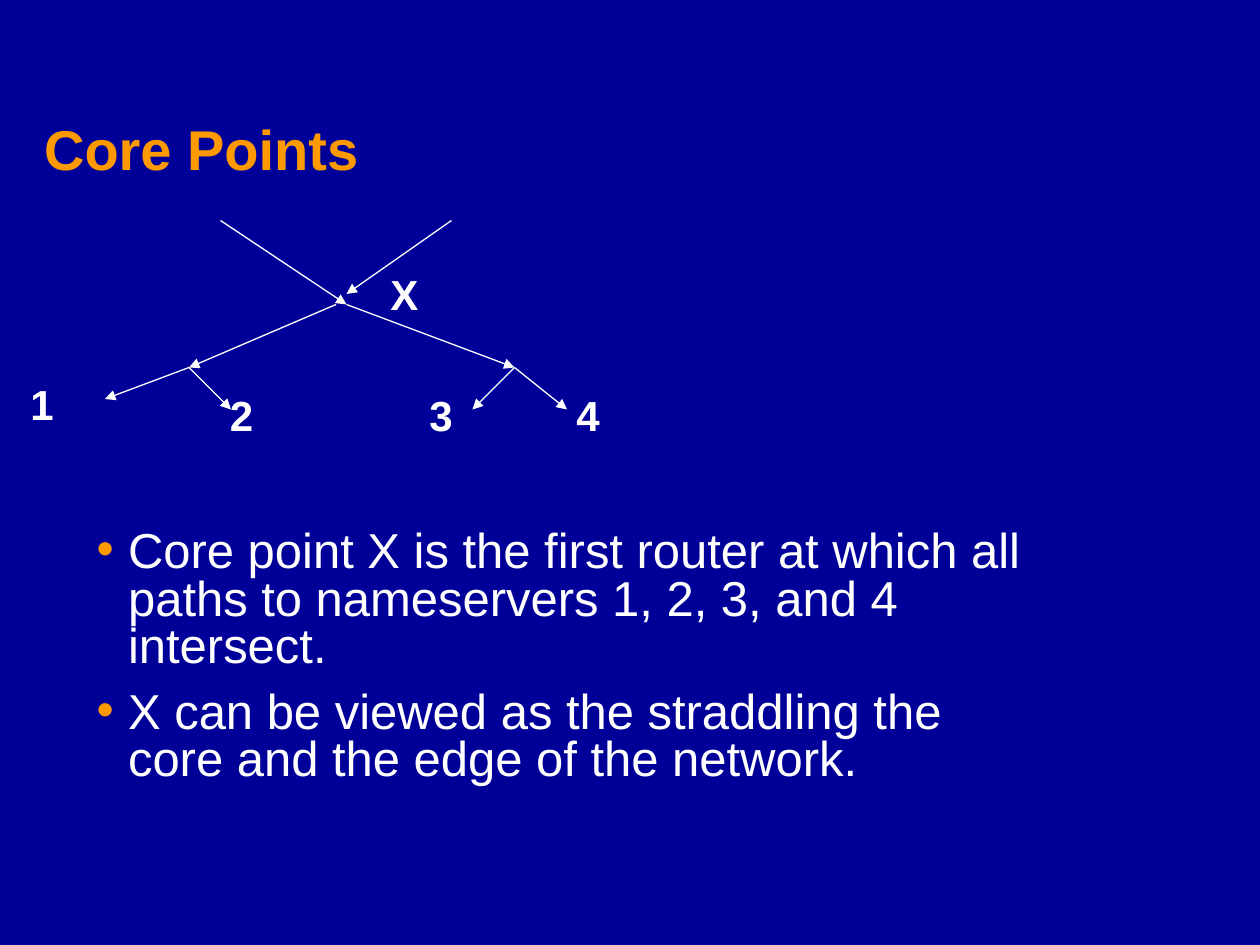
from pptx import Presentation
from pptx.dml.color import RGBColor
from pptx.enum.shapes import MSO_CONNECTOR as Link
from pptx.enum.text import MSO_ANCHOR as Anchor, MSO_AUTO_SIZE as Fit, PP_ALIGN as Align
from pptx.oxml.ns import qn
from pptx.util import Pt
from lxml.etree import SubElement as Sub

COLORS = {"back": "000099", "accent": "FF9900", "ink": "FFFFFF"}

LEFT, RIGHT = (108, 210), (294, 210)
ARROWS = [
    ((126, 126), (198, 174)),
    ((198, 174), RIGHT),
    (RIGHT, (270, 234)),
    (RIGHT, (324, 234)),
    ((258, 126), (198, 168)),
    ((192, 174), LEFT),
    (LEFT, (60, 228)),
    (LEFT, (132, 234)),
]
LABELS = [
    ("X", 216, 150, 30),
    ("1", 10, 213, 28),
    ("2", 124, 219, 28),
    ("3", 238, 219, 28),
    ("4", 322, 219, 28),
]
POINTS = [
    "Core point X is the first router at which all paths to nameservers 1, 2, 3, and 4 intersect.",
    "X can be viewed as the straddling the core and the edge of the network.",
]


class Deck:
    """Holds the style and the current slide."""

    font = "Arial"

    def __init__(self):
        self.prs = Presentation()
        self.prs.slide_width, self.prs.slide_height = Pt(720), Pt(540)
        self.slide = self.prs.slides.add_slide(self.prs.slide_layouts[1])
        fill = self.slide.background.fill
        fill.solid()
        fill.fore_color.rgb = self.color("back")

    def color(self, name):
        return RGBColor.from_string(COLORS[name])

    def place(self, shape, x, y, w, h):
        shape.left, shape.top, shape.width, shape.height = map(Pt, (x, y, w, h))

    def text(self, para, words, size, color="ink", bold=False):
        run = para.add_run()
        run.text = words
        font = run.font
        font.name, font.size, font.bold = self.font, Pt(size), bold
        font.color.rgb = self.color(color)

    def title(self, words, box):
        shape = self.slide.shapes.title
        self.place(shape, *box)
        frame = shape.text_frame
        frame.auto_size = Fit.NONE
        frame.vertical_anchor = Anchor.BOTTOM
        para = frame.paragraphs[0]
        para.alignment = Align.LEFT
        para.line_spacing = 0.9
        self.text(para, words, 32, "accent", True)

    def bullet(self, para):
        props = para._p.get_or_add_pPr()
        props.set("marL", str(Pt(18)))
        props.set("indent", str(-Pt(18)))
        tint = Sub(props, qn("a:buClr"))
        Sub(tint, qn("a:srgbClr"), val=COLORS["accent"])
        Sub(props, qn("a:buFont"), typeface=self.font)
        Sub(props, qn("a:buChar"), char="•")

    def body(self, items, box):
        shape = self.slide.placeholders[1]
        self.place(shape, *box)
        frame = shape.text_frame
        frame.auto_size = Fit.NONE
        for i, words in enumerate(items):
            para = frame.add_paragraph() if i else frame.paragraphs[0]
            self.bullet(para)
            para.line_spacing = 0.8
            para.space_before = Pt(11 if i else 0)
            self.text(para, words, 28)

    def arrow(self, start, end):
        link = self.slide.shapes.add_connector(
            Link.STRAIGHT, *map(Pt, start + end))
        link.line.color.rgb = self.color("ink")
        link.line.width = Pt(0.75)
        props = link._element.spPr
        Sub(props.find(qn("a:ln")), qn("a:tailEnd"), type="triangle")
        Sub(props, qn("a:effectLst"))

    def label(self, words, x, y, w):
        box = self.slide.shapes.add_textbox(Pt(x), Pt(y), Pt(w), Pt(36))
        frame = box.text_frame
        frame.word_wrap = False
        frame.auto_size = Fit.SHAPE_TO_FIT_TEXT
        para = frame.paragraphs[0]
        para.alignment = Align.CENTER
        self.text(para, words, 24, bold=True)


def main():
    deck = Deck()
    deck.title("Core Points", (18, 18, 564, 90))
    deck.body(POINTS, (48, 300, 552, 162))
    for start, end in ARROWS:
        deck.arrow(start, end)
    for item in LABELS:
        deck.label(*item)
    deck.prs.save("out.pptx")


if __name__ == "__main__":
    main()
